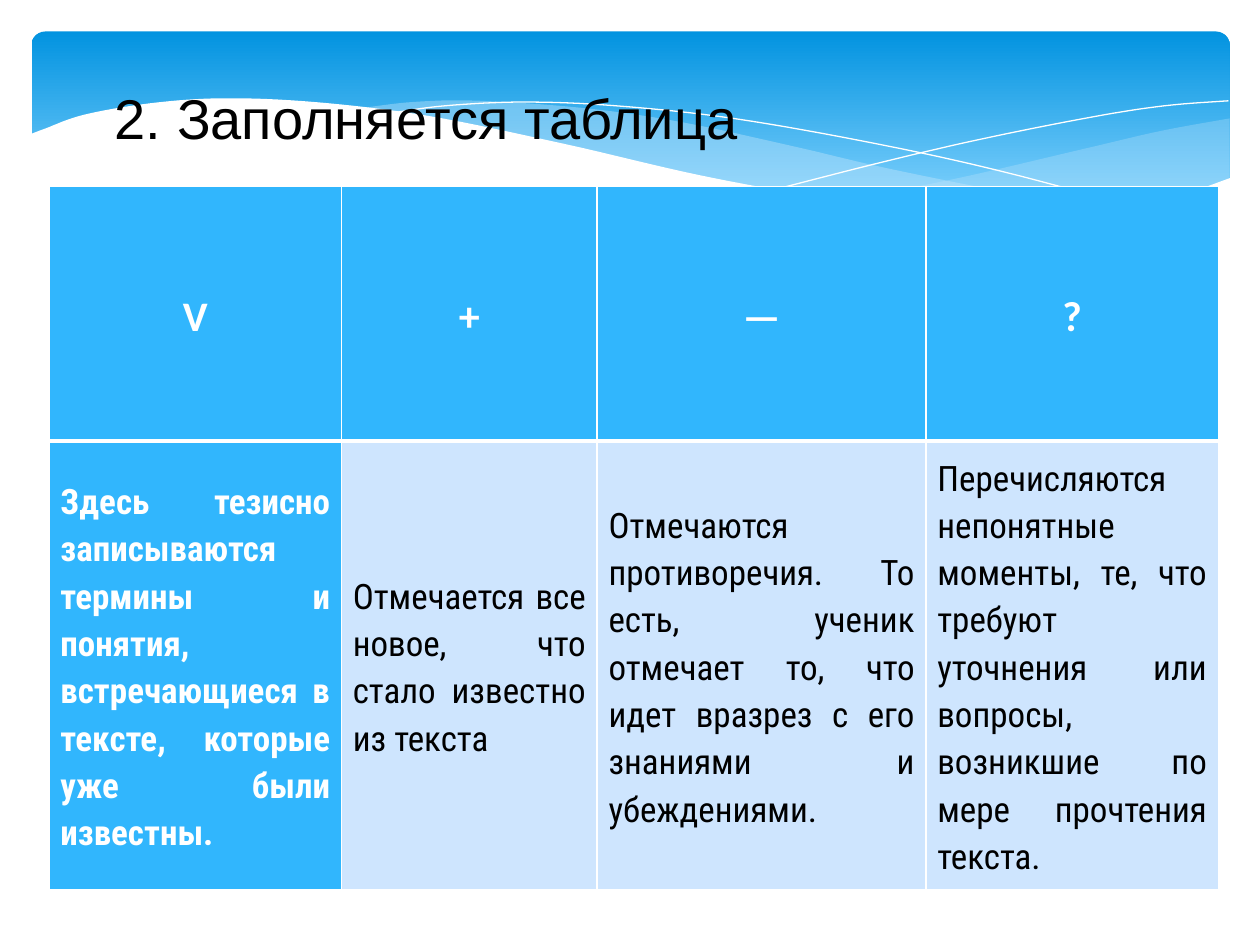
from lxml.etree import SubElement
from pptx import Presentation
from pptx.dml.color import RGBColor
from pptx.enum.shapes import MSO_SHAPE
from pptx.enum.text import MSO_ANCHOR, PP_ALIGN
from pptx.oxml.ns import qn
from pptx.util import Inches, Pt

COLORS = {
    "white": "FFFFFF", "black": "000000", "sky_top": "0293E0", "sky_bottom": "83D3FE",
    "mist": "C6E7FC", "header": "31B6FD", "body": "CEE5FE",
}
STEPS = 8  # straight segments between two neighbouring curve points

RIGHT_WAVE = [
    [(9.76, 0.94), (9.21, 1.04), (8.61, 1.18), (7.53, 1.43), (6.61, 1.6)],
    [(6.61, 1.6), (7.19, 1.67), (7.69, 1.71), (8.24, 1.72), (8.72, 1.69),
     (9.21, 1.6), (9.49, 1.52), (9.76, 1.41)],
]
MIDDLE_WAVE = [
    [(8.93, 1.67), (8.07, 1.54), (7.06, 1.34), (6.29, 1.16), (5.41, 0.97),
     (4.65, 0.86), (3.8, 0.8), (3.28, 0.81), (2.86, 0.86)],
    [(2.86, 0.86), (3.62, 0.97), (4.49, 1.16), (5.66, 1.43), (6.5, 1.58),
     (7.22, 1.68), (7.85, 1.72), (8.38, 1.72), (8.93, 1.67)],
]
FALLING_LINE = [[(3.09, 0.9), (3.53, 0.84), (4.16, 0.81), (4.89, 0.84), (5.82, 0.94),
                 (6.95, 1.14), (7.95, 1.36), (9.07, 1.66)]]
RISING_LINE = [[(6.13, 1.51), (6.95, 1.3), (7.76, 1.11), (8.66, 0.93), (9.24, 0.84),
                (9.75, 0.8)]]
WHITE_WAVE = [
    [(9.77, 1.41), (9.3, 1.57), (8.75, 1.67), (8.09, 1.71), (7.26, 1.67), (6.48, 1.56),
     (5.55, 1.39), (4.47, 1.14), (3.4, 0.92), (2.5, 0.81), (1.77, 0.78), (1.19, 0.82),
     (0.67, 0.91), (0.36, 1.02), (0.23, 1.07)],
    [(0.23, 2.24), (9.77, 2.24)],
]

COLUMN_WIDTHS = [2.32, 2.03, 2.61, 2.32]
ROW_HEIGHTS = [2.02, 3.29]
HEADINGS = ["V", "+", "—", "?"]
DESCRIPTIONS = [
    "Здесь тезисно записываются термины и понятия, встречающиеся в тексте, "
    "которые уже были известны.",
    "Отмечается все новое, что стало известно из текста",
    "Отмечаются противоречия. То есть, ученик отмечает то, что идет вразрез "
    "с его знаниями и убеждениями.",
    "Перечисляются непонятные моменты, те, что требуют уточнения или вопросы, "
    "возникшие по мере прочтения текста.",
]


def color(name):
    return RGBColor.from_string(COLORS[name])


def smooth(points):
    """Return points along a Catmull-Rom curve through the given points."""
    padded = [points[0], *points, points[-1]]
    curve = [points[0]]
    for before, start, end, after in zip(padded, padded[1:], padded[2:], padded[3:]):
        for step in range(1, STEPS + 1):
            t = step / STEPS
            curve.append(tuple(
                b + t / 2 * (c - a + t * (2 * a - 5 * b + 4 * c - d
                                          + t * (3 * (b - c) + d - a)))
                for a, b, c, d in zip(before, start, end, after)))
    return curve


class SlideBuilder:
    def __init__(self, presentation):
        self.slide = presentation.slides.add_slide(presentation.slide_layouts[5])
        self.shapes = self.slide.shapes

    def sky(self, left, top, width, height):
        shape = self.shapes.add_shape(
            MSO_SHAPE.ROUNDED_RECTANGLE, *map(Inches, (left, top, width, height)))
        shape.adjustments[0] = 0.07
        shape.shadow.inherit = False
        shape.line.fill.background()
        shape.fill.gradient()
        shape.fill.gradient_angle = 270
        stops = [("sky_top", 0), ("sky_bottom", 0.9)]
        for stop, (name, position) in zip(shape.fill.gradient_stops, stops):
            stop.color.rgb = color(name)
            stop.position = position

    def outline(self, curves, closed):
        points = [(Inches(x), Inches(y)) for curve in curves for x, y in smooth(curve)]
        builder = self.shapes.build_freeform(*points[0])
        builder.add_line_segments(points[1:], close=closed)
        shape = builder.convert_to_shape()
        shape.shadow.inherit = False
        return shape

    def wave(self, curves, name, opacity=100):
        shape = self.outline(curves, closed=True)
        shape.line.fill.background()
        shape.fill.solid()
        shape.fill.fore_color.rgb = color(name)
        if opacity < 100:
            tone = shape.element.spPr.find(qn("a:solidFill"))[0]
            SubElement(tone, qn("a:alpha"), val=str(opacity * 1000))

    def curved_line(self, curves):
        shape = self.outline(curves, closed=False)
        shape.fill.background()
        shape.line.color.rgb = color("white")
        shape.line.width = Pt(0)

    def set_text(self, frame, text, align, font):
        frame.text = text
        frame.word_wrap = True
        paragraph = frame.paragraphs[0]
        paragraph.alignment = align
        paragraph.line_spacing = 1.15
        run = paragraph.runs[0]
        run.font.color.rgb = color(font["color"])
        for key in ("name", "size", "bold"):
            setattr(run.font, key, font[key])

    def title(self, text, left, top, width, height):
        title = self.shapes.title
        box = dict(left=left, top=top, width=width, height=height)
        for key, value in box.items():
            setattr(title, key, Inches(value))
        title.text_frame.vertical_anchor = MSO_ANCHOR.BOTTOM
        self.set_text(title.text_frame, text, PP_ALIGN.CENTER,
                      dict(name="Arial", size=Pt(32), bold=False, color="black"))
        title.element.getparent().append(title.element)  # bring in front of the waves

    def borders(self, cell, widths):
        properties = cell._tc.get_or_add_tcPr()
        for side, width in zip("LRTB", widths):
            line = SubElement(properties, qn(f"a:ln{side}"), w=str(Pt(width)))
            fill = SubElement(line, qn("a:solidFill"))
            SubElement(fill, qn("a:srgbClr"), val=COLORS["white"])

    def cell(self, cell, text, fill, align, font, border_widths):
        for side in ("left", "right", "top", "bottom"):
            setattr(cell, f"margin_{side}", Inches(0.09))
        cell.vertical_anchor = MSO_ANCHOR.MIDDLE
        self.borders(cell, border_widths)
        cell.fill.solid()
        cell.fill.fore_color.rgb = color(fill)
        self.set_text(cell.text_frame, text, align, font)

    def table(self, left, top):
        size = sum(COLUMN_WIDTHS), sum(ROW_HEIGHTS)
        table = self.shapes.add_table(
            len(ROW_HEIGHTS), len(COLUMN_WIDTHS),
            *map(Inches, (left, top, *size))).table
        table.horz_banding = False
        for row, height in zip(table.rows, ROW_HEIGHTS):
            row.height = Inches(height)
        for index, width in enumerate(COLUMN_WIDTHS):
            table.columns[index].width = Inches(width)
            self.cell(table.cell(0, index), HEADINGS[index], "header", PP_ALIGN.CENTER,
                      dict(name="Calibri", size=Pt(24), bold=True, color="white"),
                      (1, 1, 1, 3))
            first = index == 0
            self.cell(table.cell(1, index), DESCRIPTIONS[index],
                      "header" if first else "body", PP_ALIGN.JUSTIFY,
                      dict(name="Roboto Condensed", size=Pt(20), bold=first,
                           color="white" if first else "black"),
                      (1, 1, 3, 1))


def main():
    presentation = Presentation()
    presentation.slide_width, presentation.slide_height = Inches(10), Inches(7.5)
    builder = SlideBuilder(presentation)
    builder.sky(0.25, 0.25, 9.51, 1.56)
    builder.wave(RIGHT_WAVE, "mist", opacity=29)
    builder.wave(MIDDLE_WAVE, "mist", opacity=40)
    builder.curved_line(FALLING_LINE)
    builder.curved_line(RISING_LINE)
    builder.wave(WHITE_WAVE, "white")
    builder.table(0.39, 1.48)
    builder.title("2. Заполняется таблица", 0.51, -0.09, 5.75, 1.34)
    presentation.save("out.pptx")


if __name__ == "__main__":
    main()
